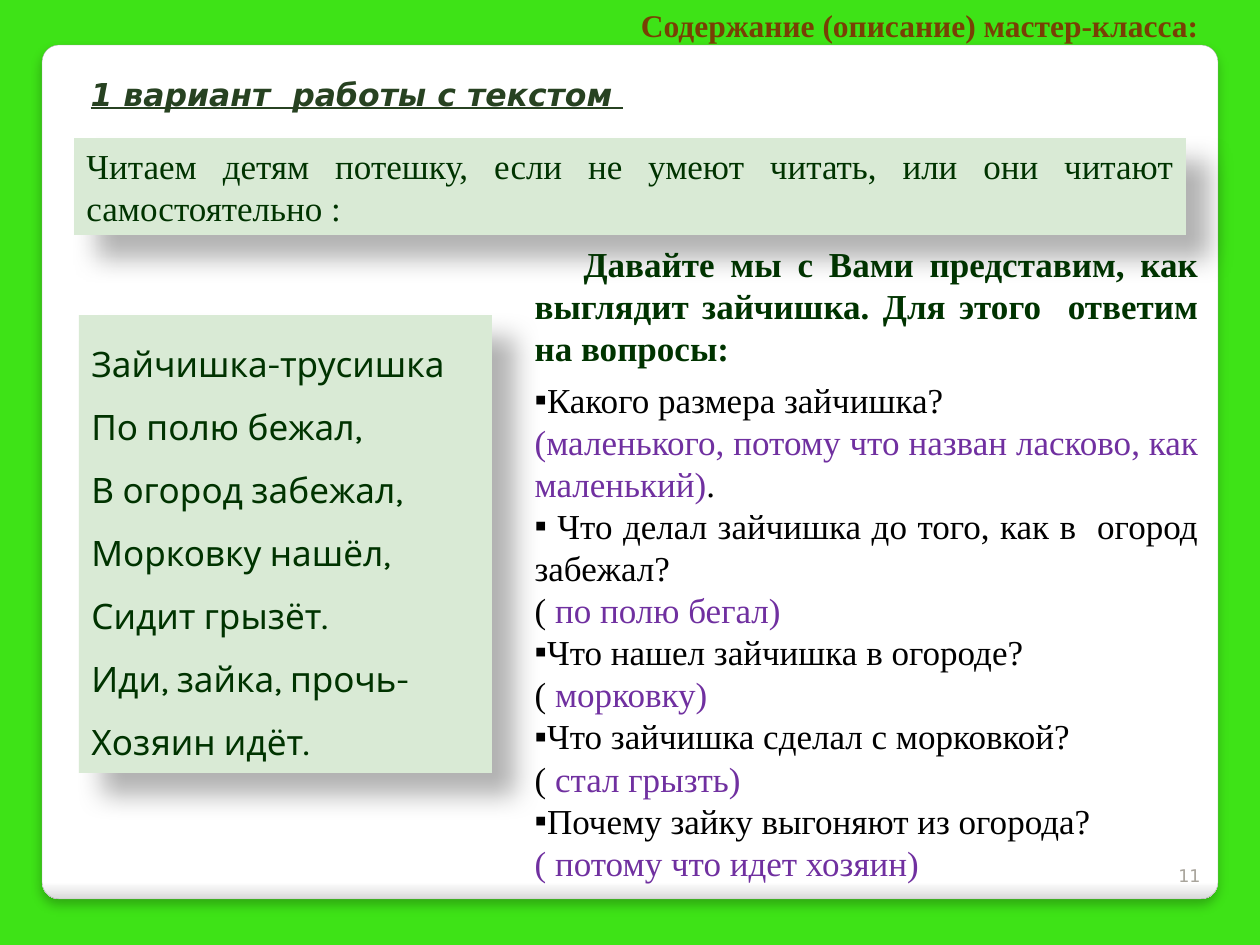
from pptx import Presentation
from pptx import util as u
from pptx.dml.color import RGBColor
from pptx.enum import shapes, text
from pptx.oxml import parse_xml
from pptx.oxml.ns import nsdecls, qn

SERIF, SANS, POEM_FONT = "Times New Roman", "DejaVu Sans", "Karla"
GREEN, PALE, VIOLET, BLACK = "003300", "D9EAD5", "7030A0", "000000"
LEFT, RIGHT, JUSTIFY = text.PP_ALIGN.LEFT, text.PP_ALIGN.RIGHT, text.PP_ALIGN.JUSTIFY

HEADER = "Содержание (описание) мастер-класса:"
TITLE = "1 вариант  работы с текстом "
TASK = "Читаем детям потешку, если не умеют читать, или они читают самостоятельно :"
POEM = ["Зайчишка-трусишка", "По полю бежал,", "В огород забежал,", "Морковку нашёл,",
        "Сидит грызёт.", "Иди, зайка, прочь-", "Хозяин идёт."]
INTRO = "Давайте мы с Вами представим, как выглядит зайчишка. Для этого  ответим на вопросы:"
QUESTIONS = [
    ("Какого размера зайчишка? ",
     [("(маленького, потому что назван ласково, как маленький)", VIOLET), (".", BLACK)]),
    (" Что делал зайчишка до того, как в  огород забежал? ",
     [("( ", BLACK), ("по полю бегал)", VIOLET)]),
    ("Что нашел зайчишка в огороде? ", [("( ", BLACK), ("морковку)", VIOLET)]),
    ("Что зайчишка сделал с морковкой? ", [("( ", BLACK), ("стал грызть)", VIOLET)]),
    ("Почему зайку выгоняют из огорода? ", [("( потому что идет хозяин)", VIOLET)]),
]


def px(n):
    return u.Emu(round(n * 914400 / 126))


def rgb(value):
    return RGBColor.from_string(value)


def place(sp, box):
    sp.left, sp.top, sp.width, sp.height = map(px, box)


def add_run(p, words, size, font, color, bold=False, italic=False, underline=False):
    r = p.add_run()
    r.text = words
    f = r.font
    f.size, f.name, f.bold, f.italic, f.underline = u.Pt(size), font, bold, italic, underline
    f.color.rgb = rgb(color)


def setup(sp, align=LEFT, anchor=text.MSO_ANCHOR.TOP):
    tf = sp.text_frame
    tf.word_wrap, tf.auto_size, tf.vertical_anchor = True, text.MSO_AUTO_SIZE.NONE, anchor
    p = tf.paragraphs[0]
    p.alignment = align
    return p


def add_shadow(sp, alpha, blur, dist, angle):
    sp.shadow.inherit = False
    sp.element.spPr.find(qn("a:effectLst")).append(parse_xml(
        f'<a:outerShdw {nsdecls("a")} blurRad="{u.Pt(blur)}" dist="{u.Pt(dist)}" '
        f'dir="{angle * 60000}" algn="tl" rotWithShape="0"><a:srgbClr val="000000">'
        f'<a:alpha val="{alpha * 1000}"/></a:srgbClr></a:outerShdw>'))


def add_card(s):
    sp = s.shapes.add_shape(shapes.MSO_SHAPE.ROUNDED_RECTANGLE, *map(px, (42, 45, 1176, 854)))
    sp.adjustments[0] = 0.02
    sp.fill.gradient()
    sp.fill.gradient_angle = 270
    for stop, position, color in zip(sp.fill.gradient_stops, (0.98, 1), ("FFFFFF", "DADADA")):
        stop.position, stop.color.rgb = position, rgb(color)
    sp.line.color.rgb, sp.line.width = rgb("A4A4A4"), u.Pt(0.16)
    add_shadow(sp, 25, 6, 4, 90)
    s.shapes.element.insert(2, sp.element)


def add_panel(s, box, align):
    sp = s.shapes.add_shape(shapes.MSO_SHAPE.RECTANGLE, *map(px, box))
    sp.fill.solid()
    sp.fill.fore_color.rgb = rgb(PALE)
    sp.line.fill.background()
    add_shadow(sp, 30, 15, 18, 45)
    return setup(sp, align)


def add_label(s, box, **options):
    return setup(s.shapes.add_textbox(*map(px, box)), RIGHT, **options)


def format_item(p, bullet=None, indent=0):
    p.alignment, p.space_before = JUSTIFY, u.Pt(0)
    pPr = p._p.get_or_add_pPr()
    pPr.set("marL", "0")
    pPr.set("indent", str(px(indent)))
    tag = f'<a:buChar {nsdecls("a")} char="{bullet}"/>' if bullet else f'<a:buNone {nsdecls("a")}/>'
    pPr.append(parse_xml(tag))


def fill_questions(sp):
    place(sp, (522, 236, 689, 702))
    p = setup(sp)
    p.space_after = u.Pt(6)
    format_item(p, indent=49)
    add_run(p, INTRO, 20, SERIF, GREEN, bold=True)
    for question, answer in QUESTIONS:
        for bullet, runs in (("▪", [(question, BLACK)]), (None, answer)):
            p = sp.text_frame.add_paragraph()
            format_item(p, bullet)
            for words, color in runs:
                add_run(p, words, 20, SERIF, color)


def main():
    """Build the reading-task slide and save it."""
    prs = Presentation()
    prs.slide_width, prs.slide_height = px(1260), px(945)
    s = prs.slides.add_slide(prs.slide_layouts[1])
    s.background.fill.solid()
    s.background.fill.fore_color.rgb = rgb("3EE317")
    add_card(s)

    p = add_panel(s, (79, 315, 413, 458), LEFT)
    p.line_spacing = 1.5
    for i, line in enumerate(POEM):
        if i:
            p.add_line_break()
        add_run(p, line, 20, POEM_FONT, GREEN)

    add_run(add_panel(s, (74, 138, 1112, 97), JUSTIFY), TASK, 20, SERIF, GREEN)
    add_run(add_label(s, (601, 0, 610, 50)), HEADER, 18, SERIF, "784004", bold=True)
    add_run(add_label(s, (1150, 842, 63, 50), anchor=text.MSO_ANCHOR.BOTTOM),
            "11", 10, SANS, "A8A49B")

    title, body = s.placeholders
    place(title, (78, 69, 591, 89))
    add_run(setup(title), TITLE, 18, SANS, "274221", bold=True, italic=True, underline=True)
    fill_questions(body)
    for sp in (body, title):
        s.shapes.element.append(sp.element)
    prs.save("out.pptx")


if __name__ == "__main__":
    main()
